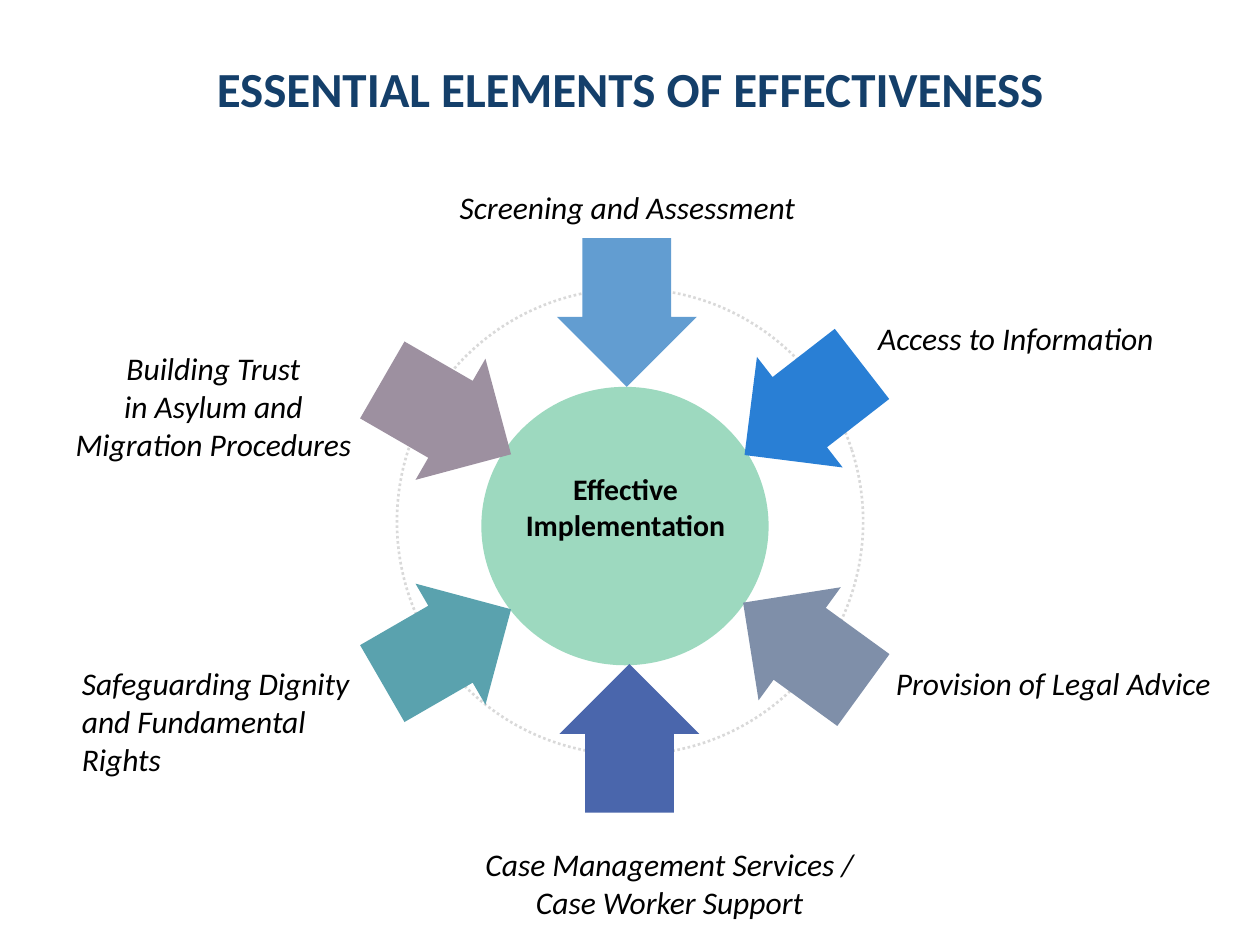
from lxml import etree
from pptx import Presentation
from pptx import util as u
from pptx.dml.color import RGBColor
from pptx.enum import dml, shapes, text

W, H = 10, 7.5
FONT = "Calibri"
COLORS = {
    "title": "143F6A", "text": "000000", "ring": "D9D9D9", "hub": "9DD9BF",
    "sky": "629DD1", "blue": "297FD5", "slate": "7F8FA9",
    "indigo": "4A66AC", "teal": "5AA2AE", "mauve": "9D90A0",
}
LEFT, CENTER = text.PP_ALIGN.LEFT, text.PP_ALIGN.CENTER

# Content: lines, box (left, top, width, height), alignment
TITLE = (["ESSENTIAL ELEMENTS OF EFFECTIVENESS"], (0.69, 0.21, 8.62, 0.97), CENTER)
HUB_LABEL = (["Effective", "Implementation"], (4.06, 3.69, 1.81, 0.67), CENTER)
LABELS = [
    (["Screening and Assessment"], (3.61, 1.49, 2.74, 0.3), CENTER),
    (["Access to Information"], (6.97, 2.53, 2.74, 0.3), LEFT),
    (["Provision of Legal Advice"], (7.11, 5.27, 2.74, 0.3), LEFT),
    (["Case Management Services /", "Case Worker Support"],
     (2.95, 6.71, 4.73, 0.61), CENTER),
    (["Safeguarding Dignity and Fundamental Rights"],
     (0.65, 5.27, 2.3, 0.91), LEFT),
    (["Building Trust", "in Asylum and Migration Procedures"],
     (0.53, 2.77, 2.33, 0.91), CENTER),
]

# Arrows: colour, column centre, row centre, rotation of a down arrow
COL_L, COL_R = 3.545, 6.375
ROW_LOW = 5.13
ARROW_W, ARROW_H = 1.11, 1.18
ARROWS = [
    ("sky", 4.975, 2.48, 0),
    ("blue", COL_R, 3.25, 52.2),
    ("slate", COL_R, ROW_LOW, 126),
    ("indigo", 4.995, 5.86, 180),
    ("teal", COL_L, ROW_LOW, 240),
    ("mauve", COL_L, 3.31, 300),
]

prs = Presentation()
prs.slide_width, prs.slide_height = u.Inches(W), u.Inches(H)
s = prs.slides.add_slide(prs.slide_layouts[6])


def rgb(name):
    return RGBColor.from_string(COLORS[name])


def add_shape(kind, box, fill=None, rotation=0, adjust=()):
    sp = s.shapes.add_shape(kind, *map(u.Inches, box))
    sp.shadow.inherit = False
    sp.rotation = rotation
    for i, value in enumerate(adjust):
        sp.adjustments[i] = value
    if fill:
        sp.fill.solid()
        sp.fill.fore_color.rgb = rgb(fill)
        sp.line.fill.background()
    else:
        sp.fill.background()
    return sp


def add_text(lines, box, align, color="text", margin=0,
             anchor=text.MSO_ANCHOR.TOP, **font):
    tf = s.shapes.add_textbox(*map(u.Inches, box)).text_frame
    frame = {"word_wrap": True, "vertical_anchor": anchor}
    if margin is not None:
        frame.update({f"margin_{side}": margin
                      for side in ("left", "top", "right", "bottom")})
    for name, value in frame.items():
        setattr(tf, name, value)
    for i, line in enumerate(lines):
        p = tf.add_paragraph() if i else tf.paragraphs[0]
        p.alignment = align
        r = p.add_run()
        r.text = line
        for name, value in {"name": FONT, **font}.items():
            setattr(r.font, name, value)
        r.font.color.rgb = rgb(color)


# Title
add_text(*TITLE, color="title", margin=None, anchor=text.MSO_ANCHOR.MIDDLE,
         size=u.Pt(28), bold=True)

# Dotted ring: an arc that nearly closes on itself
ring = add_shape(shapes.MSO_SHAPE.ARC, (3.15, 2.29, 3.7, 3.7), rotation=180,
                 adjust=(97.2, 97.11))
ring.line.color.rgb = rgb("ring")
ring.line.width = u.Pt(1.5)
ring.line.dash_style = dml.MSO_LINE.ROUND_DOT

# Hub and the arrows that point at it
add_shape(shapes.MSO_SHAPE.OVAL, (3.82, 3.07, 2.28, 2.21), "hub")
for color, x, y, rotation in ARROWS:
    box = (x - ARROW_W / 2, y - ARROW_H / 2, ARROW_W, ARROW_H)
    add_shape(shapes.MSO_SHAPE.DOWN_ARROW, box, color, rotation, (0.635, 0.5))

# Labels
for label in LABELS:
    add_text(*label, size=u.Pt(18), italic=True)
add_text(*HUB_LABEL, margin=None, size=u.Pt(17), bold=True)

prs.save("out.pptx")
